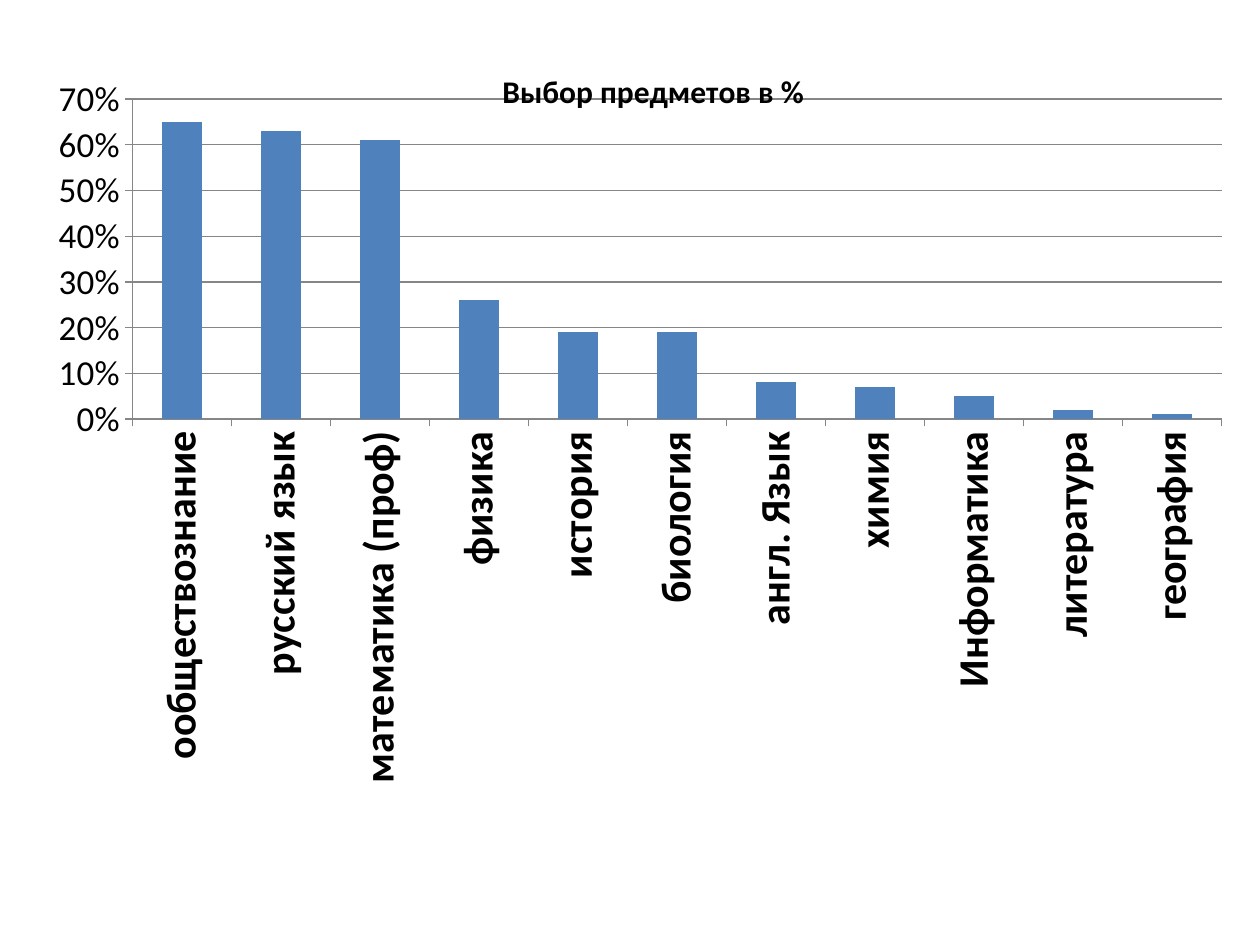
from typing import NamedTuple

from lxml import etree
from pptx import Presentation
from pptx.chart.axis import _BaseAxis
from pptx.chart.chart import Chart
from pptx.chart.data import CategoryChartData
from pptx.dml.color import RGBColor
from pptx.enum.chart import XL_CHART_TYPE, XL_TICK_MARK
from pptx.oxml import parse_xml
from pptx.oxml.ns import nsdecls, qn
from pptx.util import Inches, Pt

COLUMNS = XL_CHART_TYPE.COLUMN_CLUSTERED
TICK_OUTSIDE = XL_TICK_MARK.OUTSIDE
BLANK_LAYOUT = 6
FONT = "Calibri"
TITLE = "Выбор предметов в %"
COLORS = {"bar": "4F81BD", "line": "868686", "text": "000000"}


class Subject(NamedTuple):
    name: str
    share: float


SUBJECTS = [
    Subject("ообществознание", 0.65),
    Subject("русский язык", 0.63),
    Subject("математика (проф)", 0.61),
    Subject("физика", 0.26),
    Subject("история", 0.19),
    Subject("биология", 0.19),
    Subject("англ. Язык", 0.08),
    Subject("химия", 0.07),
    Subject("Информатика", 0.05),
    Subject("литература", 0.02),
    Subject("география", 0.01),
]


def color(name: str) -> RGBColor:
    return RGBColor.from_string(COLORS[name])


def manual_layout(**settings: object) -> etree._Element:
    items = "".join(f'<c:{tag} val="{value}"/>' for tag, value in settings.items())
    return parse_xml(
        f"<c:layout {nsdecls('c')}><c:manualLayout>{items}</c:manualLayout></c:layout>"
    )


def replace_layout(parent: etree._Element, layout: etree._Element, index: int) -> None:
    for old in parent.findall(qn("c:layout")):
        parent.remove(old)
    parent.insert(index, layout)


def style_axis(axis: _BaseAxis, size: int, bold: bool) -> None:
    axis.major_tick_mark = TICK_OUTSIDE
    axis.format.line.color.rgb = color("line")
    font = axis.tick_labels.font
    font.name = FONT
    font.size = Pt(size)
    font.bold = bold
    font.color.rgb = color("text")


def style_title(chart: Chart) -> None:
    chart.has_title = True
    frame = chart.chart_title.text_frame
    frame.text = TITLE
    font = frame.paragraphs[0].font
    font.name = FONT
    font.size = Pt(18)
    font.bold = True
    font.color.rgb = color("text")
    layout = manual_layout(xMode="edge", yMode="edge", x=0.38, y=0.04)
    replace_layout(chart.chart_title._element, layout, 1)


def style_axes(chart: Chart) -> None:
    style_axis(chart.category_axis, 24, True)
    body = chart.category_axis._element.find(qn("c:txPr")).find(qn("a:bodyPr"))
    body.set("rot", "-5400000")
    body.set("vert", "horz")

    values = chart.value_axis
    style_axis(values, 20, False)
    values.minimum_scale = 0
    values.maximum_scale = 0.7
    values.major_unit = 0.1
    values.tick_labels.number_format = "0%"
    values.tick_labels.number_format_is_linked = False
    values.has_major_gridlines = True
    values.major_gridlines.format.line.color.rgb = color("line")


def main() -> None:
    deck = Presentation()
    deck.slide_width = Inches(10)
    deck.slide_height = Inches(7.5)
    page = deck.slides.add_slide(deck.slide_layouts[BLANK_LAYOUT])

    data = CategoryChartData(number_format="0%")
    data.categories = [subject.name for subject in SUBJECTS]
    data.add_series(TITLE, [subject.share for subject in SUBJECTS])
    chart = page.shapes.add_chart(
        COLUMNS, Inches(0.23), Inches(0.23), Inches(9.77), Inches(6.88), data
    ).chart

    chart.has_legend = False
    chart.font.name = FONT
    chart.font.size = Pt(10)
    style_title(chart)
    style_axes(chart)

    plot = chart.plots[0]
    plot.gap_width = 150
    plot.vary_by_categories = False
    bars = plot.series[0].format.fill
    bars.solid()
    bars.fore_color.rgb = color("bar")

    layout = manual_layout(
        layoutTarget="inner", xMode="edge", yMode="edge",
        x=0.084, y=0.081, w=0.885, h=0.369,
    )
    replace_layout(chart._chartSpace.chart.plotArea, layout, 0)

    deck.save("out.pptx")


if __name__ == "__main__":
    main()
